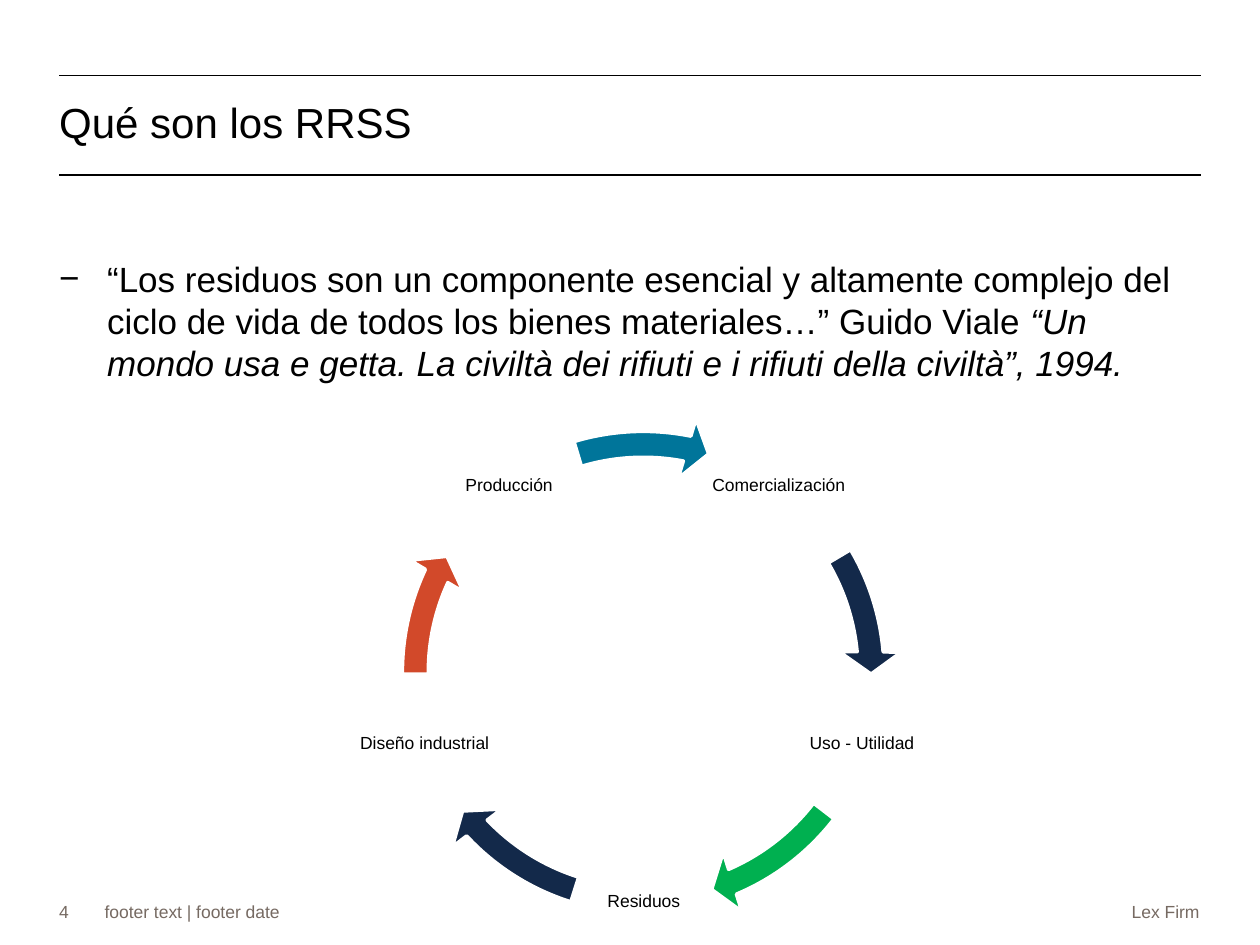
"""Build the slide on what RRSS are, with a quote and a five-step waste cycle."""
import lxml.etree
import pptx
import pptx.dml.color
import pptx.enum.shapes
import pptx.enum.text
import pptx.oxml.ns
import pptx.util

Inches = pptx.util.Inches
RGBColor = pptx.dml.color.RGBColor
ALIGN = pptx.enum.text.PP_ALIGN
ANCHOR = pptx.enum.text.MSO_ANCHOR

BLACK = RGBColor(0x00, 0x00, 0x00)
WHITE = RGBColor(0xFF, 0xFF, 0xFF)
GREY = RGBColor(0x76, 0x6A, 0x62)
NAVY = RGBColor(0x13, 0x29, 0x4A)
GREEN = RGBColor(0x00, 0xB0, 0x50)
RED = RGBColor(0xD2, 0x49, 0x2A)
TEAL = RGBColor(0x00, 0x75, 0x9A)


def place(box, left, top, width, height, margin=0, anchor=ANCHOR.TOP):
    box.left, box.top = Inches(left), Inches(top)
    box.width, box.height = Inches(width), Inches(height)
    frame_format = {
        "word_wrap": True,
        "auto_size": pptx.enum.text.MSO_AUTO_SIZE.NONE,
        "vertical_anchor": anchor,
        "margin_left": Inches(margin),
        "margin_right": Inches(margin),
        "margin_top": Inches(margin),
        "margin_bottom": Inches(margin),
    }
    for name, value in frame_format.items():
        setattr(box.text_frame, name, value)
    return box.text_frame.paragraphs[0]


def write(para, text, size, color=BLACK, **para_format):
    for name, value in para_format.items():
        setattr(para, name, value)
    span = para.add_run()
    span.text = text
    font_format = {"name": "Arial", "size": pptx.util.Pt(size)}
    for name, value in font_format.items():
        setattr(span.font, name, value)
    span.font.color.rgb = color
    return span


deck = pptx.Presentation()
deck.slide_width, deck.slide_height = Inches(10), Inches(7.5)
page = deck.slides.add_slide(deck.slide_layouts[1])
shapes = page.shapes

for height in (0.6, 1.39):
    rule = shapes.add_connector(
        pptx.enum.shapes.MSO_CONNECTOR.STRAIGHT,
        Inches(0.47), Inches(height), Inches(9.53), Inches(height))
    rule.line.color.rgb = BLACK
    rule.line.width = pptx.util.Pt(1)
    lxml.etree.SubElement(rule.element.spPr, pptx.oxml.ns.qn("a:effectLst"))

para = place(shapes.title, 0.47, 0.6, 9.06, 0.79, anchor=ANCHOR.MIDDLE)
write(para, "Qué son los RRSS", 24, alignment=ALIGN.LEFT,
      line_spacing=pptx.util.Pt(24))

para = place(page.placeholders[1], 0.47, 2.04, 9.06, 4.86)
write(para, "“Los residuos son un componente esencial y altamente complejo del "
      "ciclo de vida de todos los bienes materiales…” Guido Viale ", 20,
      space_before=pptx.util.Pt(4.8))
citation = write(para, "“Un mondo usa e getta. La civiltà dei rifiuti e i rifiuti "
                 "della civiltà”, 1994.", 20)
citation.font.italic = True
properties = para._p.get_or_add_pPr()
properties.set("marL", str(Inches(0.38)))
properties.set("indent", str(-Inches(0.38)))
bullet = lxml.etree.SubElement(properties, pptx.oxml.ns.qn("a:buChar"))
bullet.set("char", "−")

footers = [
    ("4", 0.47, 0.35, ALIGN.LEFT),
    ("footer text | footer date", 0.83, 4.17, ALIGN.LEFT),
    ("Lex Firm", 5, 4.52, ALIGN.RIGHT),
]
for text, left, width, alignment in footers:
    box = shapes.add_textbox(0, 0, 0, 0)
    para = place(box, left, 7.15, width, 0.28)
    write(para, text, 10, GREY, alignment=alignment)

steps = [
    ("Comercialización", 5.63, 3.31, NAVY, 212.93, 197.66),
    ("Uso - Utilidad", 6.29, 5.35, GREEN, 40.15, 22.53),
    ("Residuos", 4.56, 6.61, NAVY, 82.11, 64.49),
    ("Diseño industrial", 2.82, 5.35, RED, 122.98, 107.71),
    ("Producción", 3.49, 3.31, TEAL, 168.66, 151.98),
]
for text, left, top, color, arrow_end, arrow_start in steps:
    box = shapes.add_textbox(0, 0, 0, 0)
    para = place(box, left, top, 1.1, 1.1, 0.01, ANCHOR.MIDDLE)
    write(para, text, 10, alignment=ALIGN.CENTER, line_spacing=0.9)

    arrow = shapes.add_shape(
        pptx.enum.shapes.MSO_SHAPE.CIRCULAR_ARROW,
        Inches(3.05), Inches(3.28), Inches(4.11), Inches(4.11))
    for index, value in enumerate((0.05, 3.36, arrow_end, arrow_start, 0.06)):
        arrow.adjustments[index] = value
    arrow.shadow.inherit = False
    arrow.fill.solid()
    arrow.fill.fore_color.rgb = color
    arrow.line.color.rgb = WHITE
    arrow.line.width = pptx.util.Pt(2)

deck.save("out.pptx")
